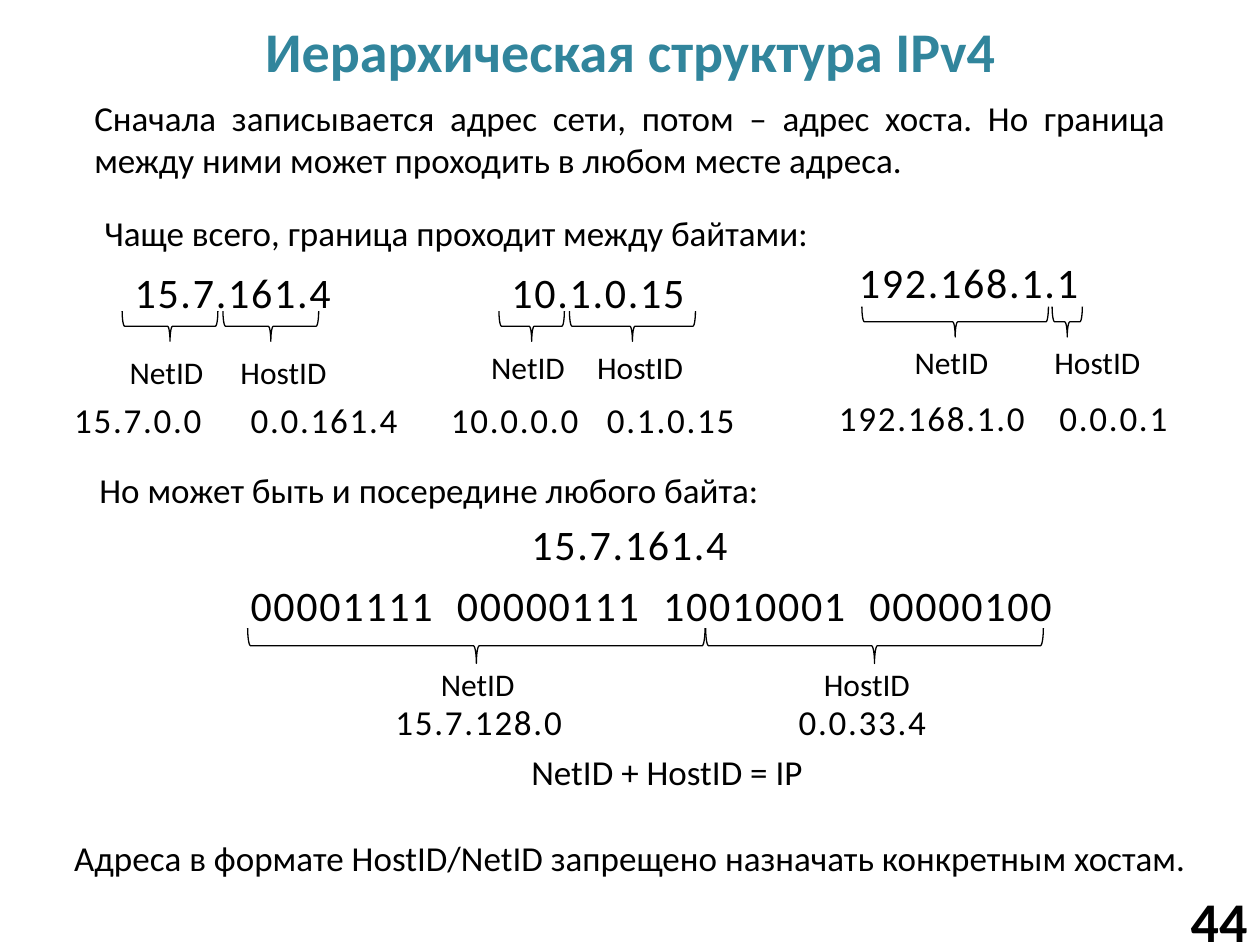
from collections import namedtuple

from pptx import Presentation
from pptx.dml.color import RGBColor
from pptx.enum.shapes import MSO_SHAPE as Shape
from pptx.enum.text import MSO_ANCHOR as Anchor, MSO_AUTO_SIZE as AutoSize, PP_ALIGN as Align
from pptx.util import Pt

COLORS = {"title": "31859C", "ink": "000000"}
FONT = "Calibri"
LABEL_WIDTHS = {"NetID": 58.3, "HostID": 64.1}
LABEL_HEIGHT, VALUE_HEIGHT, ADDRESS_HEIGHT = 29, 31.5, 36.3

Rows = namedtuple("Rows", "brace brace_height label value")
Part = namedtuple("Part", "role brace_left brace_width label_left value value_left value_width")

ADDRESSES = [
    ("15.7.161.4", 69.8, 149, 128.2),
    ("10.1.0.15", 285.1, 149, 115.2),
    ("192.168.1.1", 483.8, 143.3, 141.8),
    ("15.7.161.4", 296.6, 293, 128.2),
    ("  ".join(["00001111", "00000111", "10010001", "00000100"]), 136.1, 327.6, 489.6),
]
SPLITS = [
    (Rows(177.8, 17.3, 198, 223.9), [
        Part("NetID", 69.8, 54.7, 67, "15.7.0.0", 35.3, 88.6),
        Part("HostID", 127.4, 54.7, 130.3, "0.0.161.4", 136.1, 100.1)]),
    (Rows(177.8, 17.3, 195.1, 223.9), [
        Part("NetID", 285.1, 37.4, 273.6, "10.0.0.0", 250.6, 88.6),
        Part("HostID", 325.4, 72, 334.1, "0.1.0.15", 339.8, 88.6)]),
    (Rows(175.3, 17.3, 192.2, 223.2), [
        Part("NetID", 492.5, 106.6, 515.5, "192.168.1.0", 472.3, 122.4),
        Part("HostID", 601.2, 17.3, 595.4, "0.0.0.1", 598.3, 77.8)]),
    (Rows(358.9, 20.2, 376.6, 396.7), [
        Part("NetID", 141.5, 261.4, 244.8, "15.7.128.0", 218.9, 111.6),
        Part("HostID", 403.2, 193, 463.7, "0.0.33.4", 449.3, 88.6)]),
]
STATEMENTS = [
    ("Сначала записывается адрес сети, потом – адрес хоста. "
     "Но граница между ними может проходить в любом месте адреса.", 46.8, 51.8, 626.4, 55.4),
    ("Чаще всего, граница проходит между байтами:", 52.6, 117.4, 621.4, VALUE_HEIGHT),
    ("Но может быть и посередине любого байта:", 49.7, 264.2, 621.4, VALUE_HEIGHT),
    ("Адреса в формате HostID/NetID запрещено назначать конкретным хостам.",
     35.3, 474.5, 652.3, VALUE_HEIGHT),
]


def write(frame, text, size=20, color="ink", bold=False, align=Align.LEFT,
          anchor=Anchor.TOP, wrap=False, fit=AutoSize.SHAPE_TO_FIT_TEXT, spacing=0):
    """Put one formatted paragraph into a text frame."""
    frame.word_wrap = wrap
    frame.auto_size = fit
    frame.vertical_anchor = anchor
    paragraph = frame.paragraphs[0]
    paragraph.alignment = align
    run = paragraph.add_run()
    run.text = text
    run.font.name = FONT
    run.font.size = Pt(size)
    run.font.bold = bold
    run.font.color.rgb = RGBColor.from_string(COLORS[color])
    if spacing:
        run.font._element.set("spc", str(spacing * 100))


def add_text(slide, text, left, top, width, height, **style):
    """Add a text box with the given format."""
    box = slide.shapes.add_textbox(Pt(left), Pt(top), Pt(width), Pt(height))
    write(box.text_frame, text, **style)


def add_brace(slide, left, top, width, height):
    """Add a brace that opens upwards and covers the given area."""
    brace = slide.shapes.add_shape(
        Shape.RIGHT_BRACE, Pt(left + (width - height) / 2), Pt(top + (height - width) / 2),
        Pt(height), Pt(width))
    brace.rotation = 90
    brace.shadow.inherit = False
    brace.fill.background()
    brace.line.color.rgb = RGBColor.from_string(COLORS["ink"])
    brace.line.width = Pt(0.75)


def add_part(slide, part, rows):
    """Add the brace, the label and the value of one part of an address."""
    add_brace(slide, part.brace_left, rows.brace, part.brace_width, rows.brace_height)
    add_text(slide, part.role, part.label_left, rows.label,
             LABEL_WIDTHS[part.role], LABEL_HEIGHT, size=18)
    add_text(slide, part.value, part.value_left, rows.value,
             part.value_width, VALUE_HEIGHT, spacing=1)


def add_title(slide, text):
    """Place and fill the title placeholder."""
    title = slide.shapes.title
    title.left, title.top, title.width, title.height = Pt(20.2), Pt(3.6), Pt(680.4), Pt(49.7)
    write(title.text_frame, text, size=32, color="title", bold=True, align=Align.CENTER,
          anchor=Anchor.MIDDLE, wrap=True, fit=AutoSize.NONE)


def main():
    """Build the slide and save it."""
    deck = Presentation()
    deck.slide_width, deck.slide_height = Pt(720), Pt(540)
    slide = deck.slides.add_slide(deck.slide_layouts[5])
    add_title(slide, "Иерархическая структура IPv4")
    add_text(slide, "44", 637.9, 511.2, 82.1, 28.8, size=32, bold=True, align=Align.RIGHT,
             anchor=Anchor.MIDDLE, wrap=True, fit=AutoSize.NONE)
    for text, left, top, width, height in STATEMENTS:
        add_text(slide, text, left, top, width, height, align=Align.JUSTIFY, wrap=True)
    for address, left, top, width in ADDRESSES:
        add_text(slide, address, left, top, width, ADDRESS_HEIGHT, size=24, spacing=1)
    for rows, parts in SPLITS:
        for part in parts:
            add_part(slide, part, rows)
    add_text(slide, "NetID + HostID = IP", 296.6, 425.5, 170.6, VALUE_HEIGHT)
    deck.save("out.pptx")


if __name__ == "__main__":
    main()
